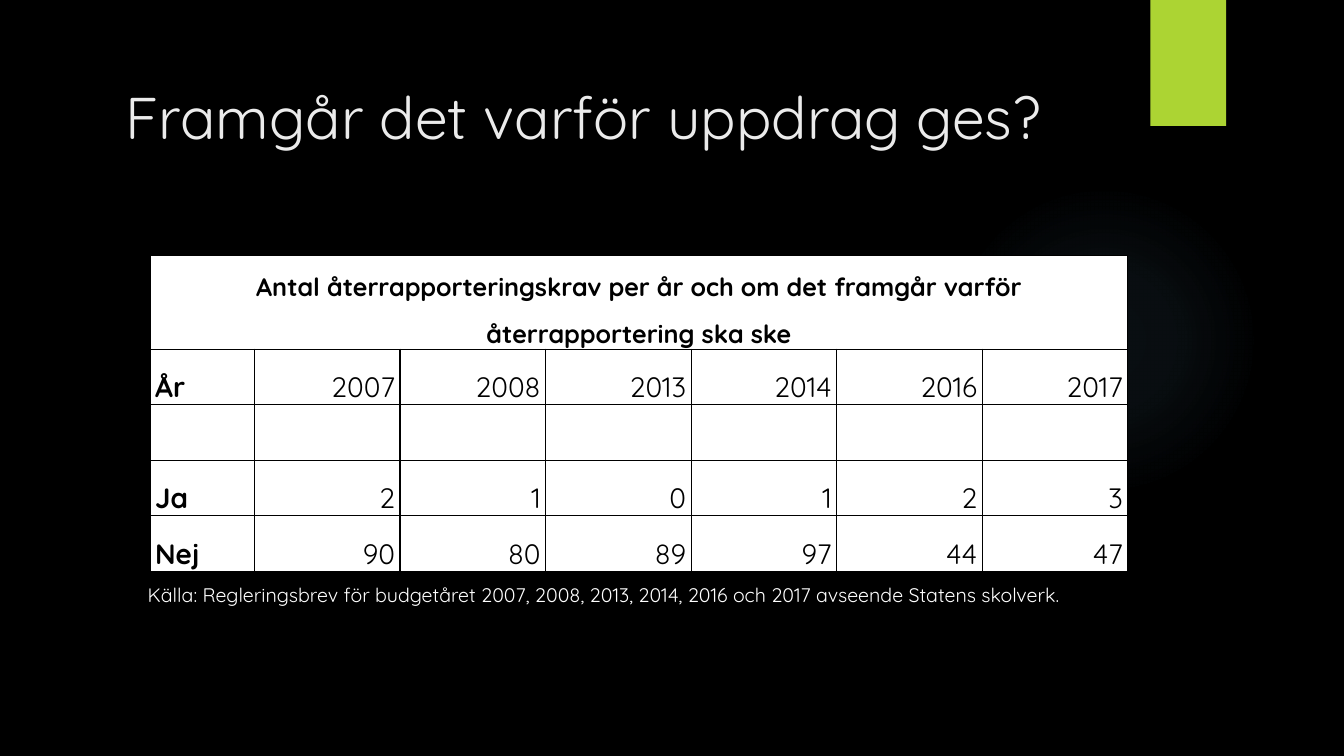
from dataclasses import dataclass

from lxml.etree import SubElement as Sub
from pptx import Presentation
from pptx.dml.color import RGBColor as RGB
from pptx.enum.shapes import MSO_SHAPE as Shape
from pptx.enum.text import MSO_ANCHOR as Anchor, PP_ALIGN as Align
from pptx.oxml.ns import qn
from pptx.util import Pt


@dataclass(frozen=True)
class Theme:
    font: str = "Quicksand"
    back: str = "000000"
    ink: str = "000000"
    paper: str = "FFFFFF"
    title: str = "EBEBEB"
    accent: str = "ACD433"
    glow: str = "7AC4F0"
    title_size: int = 42
    head_size: int = 18
    cell_size: int = 20
    source_size: int = 14


class Deck:
    """Draws themed elements on the current slide."""

    def __init__(self, prs, theme):
        self.prs, self.theme = prs, theme
        self.s = None

    def slide(self):
        self.s = self.prs.slides.add_slide(self.prs.slide_layouts[6])
        fill = self.s.background.fill
        fill.solid()
        fill.fore_color.rgb = RGB.from_string(self.theme.back)

    def style(self, p, size, color, bold=False):
        p.font.name, p.font.size, p.font.bold = self.theme.font, Pt(size), bold
        p.font.color.rgb = RGB.from_string(color)

    def shape(self, kind, x, y, w, h, color):
        sp = self.s.shapes.add_shape(kind, Pt(x), Pt(y), Pt(w), Pt(h))
        sp.shadow.inherit = False
        sp.line.fill.background()
        sp.fill.solid()
        sp.fill.fore_color.rgb = RGB.from_string(color)
        return sp

    def glow(self, x, y, size, stops):
        sp = self.shape(Shape.OVAL, x, y, size, size, self.theme.glow)
        solid = sp.element.spPr.find(qn("a:solidFill"))
        grad = solid.makeelement(qn("a:gradFill"), {"rotWithShape": "1"})
        stop_list = Sub(grad, qn("a:gsLst"))
        for pos, alpha in stops:
            stop = Sub(stop_list, qn("a:gs"), pos=str(pos * 1000))
            color = Sub(stop, qn("a:srgbClr"), val=self.theme.glow)
            Sub(color, qn("a:alpha"), val=str(alpha * 1000))
        round_path = Sub(grad, qn("a:path"), path="circle")
        Sub(round_path, qn("a:fillToRect"), dict.fromkeys("ltrb", "50000"))
        solid.getparent().replace(solid, grad)

    def text(self, x, y, w, h, text, size, color):
        tf = self.s.shapes.add_textbox(Pt(x), Pt(y), Pt(w), Pt(h)).text_frame
        tf.word_wrap = True
        tf.text = text
        self.style(tf.paragraphs[0], size, color)

    def cell(self, cell, text, size, align, bold):
        cell.margin_left = cell.margin_right = Pt(3.6)
        cell.margin_top = cell.margin_bottom = 0
        cell.vertical_anchor = Anchor.BOTTOM
        cell.text = text
        p = cell.text_frame.paragraphs[0]
        p.alignment, p.line_spacing = align, 1.5
        self.style(p, size, self.theme.ink, bold)
        tc_pr = cell._tc.get_or_add_tcPr()
        for side in "LRTB":
            ln = Sub(tc_pr, qn(f"a:ln{side}"), w=str(Pt(1)))
            Sub(Sub(ln, qn("a:solidFill")), qn("a:srgbClr"), val=self.theme.ink)
        cell.fill.solid()
        cell.fill.fore_color.rgb = RGB.from_string(self.theme.paper)

    def table(self, x, y, widths, heights, heading, rows):
        frame = self.s.shapes.add_table(len(heights), len(widths), Pt(x), Pt(y),
                                        Pt(sum(widths)), Pt(sum(heights)))
        table = frame.table
        table.first_row = table.horz_banding = False
        for col, width in zip(table.columns, widths):
            col.width = Pt(width)
        for row, height in zip(table.rows, heights):
            row.height = Pt(height)
        head = [heading] + [""] * (len(widths) - 1)
        for i, row in enumerate([head] + rows):
            for j, value in enumerate(row):
                size = self.theme.cell_size if i else self.theme.head_size
                align = Align.CENTER if i == 0 else Align.RIGHT if j else Align.LEFT
                self.cell(table.cell(i, j), str(value), size, align, i == 0 or j == 0)
        table.cell(0, 0).merge(table.cell(0, len(widths) - 1))


def main():
    prs = Presentation()
    prs.slide_width, prs.slide_height = Pt(960), Pt(540)
    theme = Theme()
    deck = Deck(prs, theme)
    deck.slide()
    deck.glow(677.5, 131.8, 221.8, [(0, 7), (36, 6), (69, 0)])
    deck.shape(Shape.RECTANGLE, 821.8, 0, 54, 90, theme.accent)
    deck.text(82.8, 54, 740.9, 110.2, "Framgår det varför uppdrag ges?",
              theme.title_size, theme.title)
    deck.table(
        107.2, 182.2, [74.6] + [104] * 6, [67.2] + [39.7] * 4,
        "Antal återrapporteringskrav per år och om det framgår varför "
        "återrapportering ska ske",
        [["År", 2007, 2008, 2013, 2014, 2016, 2017],
         [""] * 7,
         ["Ja", 2, 1, 0, 1, 2, 3],
         ["Nej", 90, 80, 89, 97, 44, 47]])
    deck.text(98.4, 412.8, 707, 25,
              "Källa: Regleringsbrev för budgetåret 2007, 2008, 2013, 2014, 2016 "
              "och 2017 avseende Statens skolverk.",
              theme.source_size, theme.paper)
    prs.save("out.pptx")


if __name__ == "__main__":
    main()
